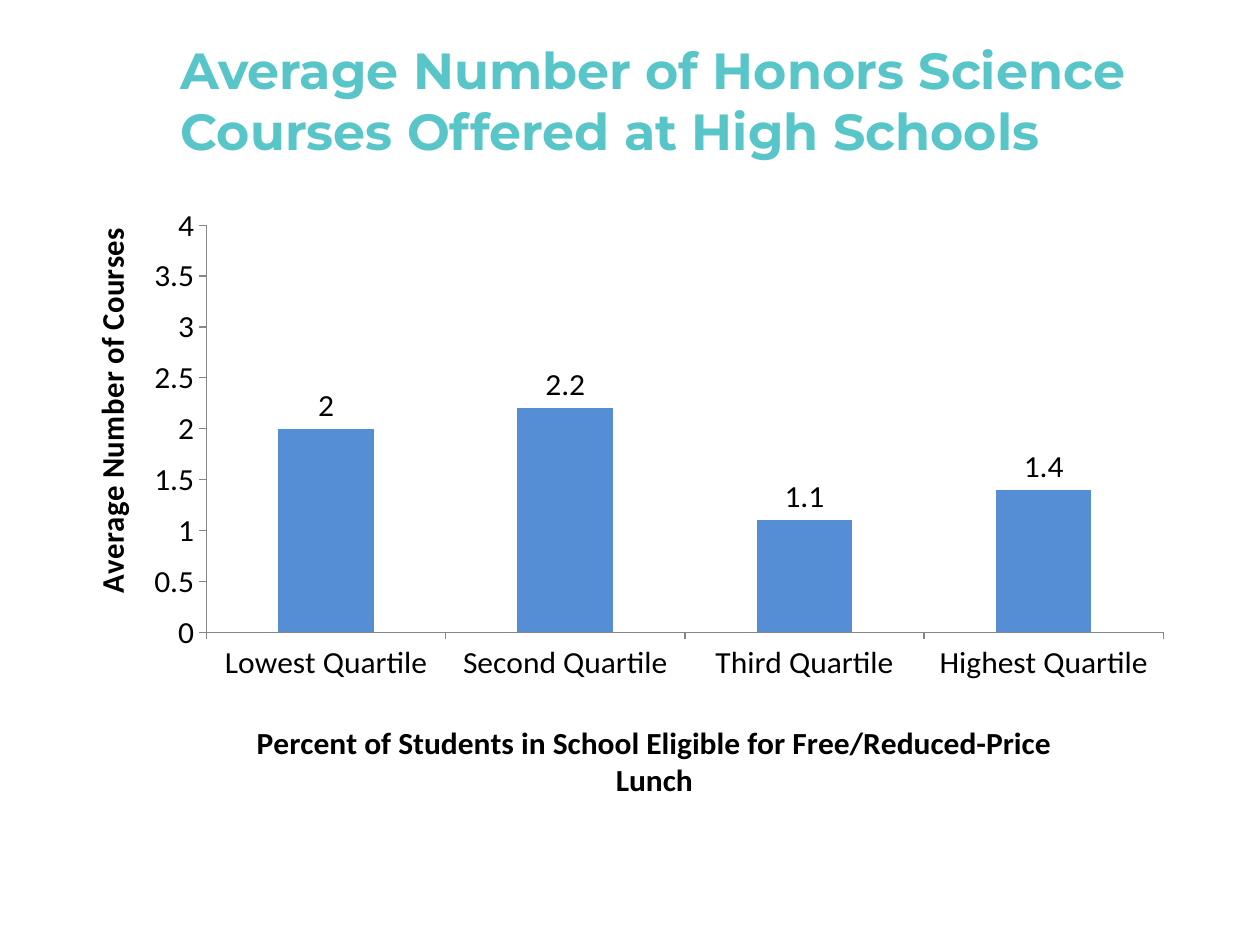
from dataclasses import dataclass

from lxml import etree
from pptx import Presentation
from pptx import util as u
from pptx.chart.data import CategoryChartData
from pptx.dml.color import RGBColor
from pptx.enum import chart as ch, text
from pptx.oxml.ns import qn


@dataclass(frozen=True)
class Theme:
    heading_font: str = "Montserrat"
    body_font: str = "Calibri"
    heading_size: int = 29
    body_size: int = 18
    heading: str = "58C5C9"
    ink: str = "000000"
    bar: str = "558ED5"
    axis: str = "868686"


def style_font(font, name, size, color, bold=False):
    font.name, font.size, font.bold = name, u.Pt(size), bold
    font.color.rgb = RGBColor.from_string(color)


def place(parent, index, inner=False, **fractions):
    """Give a chart part a manual layout, in fractions of the chart."""
    for old in parent.findall(qn("c:layout")):
        parent.remove(old)
    layout = etree.Element(qn("c:layout"))
    parent.insert(index, layout)
    manual = etree.SubElement(layout, qn("c:manualLayout"))
    settings = {"layoutTarget": "inner"} if inner else {}
    settings.update(xMode="edge", yMode="edge", **fractions)
    for tag, value in settings.items():
        etree.SubElement(manual, qn(f"c:{tag}")).set("val", str(value))


class SlideBuilder:
    def __init__(self, deck, theme):
        self.theme = theme
        self.slide = deck.slides.add_slide(deck.slide_layouts[5])

    def title(self, words, left, top, width, height):
        heading = self.slide.shapes.title
        heading.left, heading.top = u.Pt(left), u.Pt(top)
        heading.width, heading.height = u.Pt(width), u.Pt(height)
        frame = heading.text_frame
        frame.text = words
        frame.word_wrap = True
        frame.auto_size = text.MSO_AUTO_SIZE.NONE
        frame.vertical_anchor = text.MSO_ANCHOR.MIDDLE
        line = frame.paragraphs[0]
        line.alignment = text.PP_ALIGN.LEFT
        style_font(line.font, self.theme.heading_font, self.theme.heading_size,
                   self.theme.heading, bold=True)

    def axis(self, axis, words, x, y):
        axis.has_major_gridlines = False
        axis.major_tick_mark = ch.XL_TICK_MARK.OUTSIDE
        axis.minor_tick_mark = ch.XL_TICK_MARK.NONE
        axis.format.line.color.rgb = RGBColor.from_string(self.theme.axis)
        axis.format.line.width = u.Pt(0.75)
        caption = axis.axis_title
        caption.text_frame.text = words
        style_font(caption.text_frame.paragraphs[0].font, self.theme.body_font,
                   self.theme.body_size, self.theme.ink, bold=True)
        place(caption._element, 1, x=x, y=y)
        return caption

    def column_chart(self, categories, values, left, top, width, height):
        courses = CategoryChartData()
        courses.categories = categories
        courses.add_series("Series 1", values)
        chart = self.slide.shapes.add_chart(
            ch.XL_CHART_TYPE.COLUMN_CLUSTERED, u.Pt(left), u.Pt(top),
            u.Pt(width), u.Pt(height), courses).chart
        chart.has_legend = False
        chart.has_title = False
        style_font(chart.font, self.theme.body_font, self.theme.body_size,
                   self.theme.ink)

        # Bars and their values
        plot = chart.plots[0]
        plot.gap_width = 150
        plot.vary_by_categories = False
        fill = plot.series[0].format.fill
        fill.solid()
        fill.fore_color.rgb = RGBColor.from_string(self.theme.bar)
        plot.has_data_labels = True
        plot.data_labels.show_value = True
        plot.data_labels.position = ch.XL_LABEL_POSITION.OUTSIDE_END
        plot_area = chart._chartSpace.find(".//" + qn("c:plotArea"))
        place(plot_area, 0, inner=True, x=0.12, y=0.05, w=0.86, h=0.68)

        # Axes
        self.axis(chart.category_axis,
                  "Percent of Students in School Eligible for "
                  "Free/Reduced-Price Lunch", 0.16, 0.87)
        scale = chart.value_axis
        scale.minimum_scale, scale.maximum_scale = 0, 4
        scale.major_unit = 0.5
        caption = self.axis(scale, "Average Number of Courses", 0.01, 0.06)
        body = caption._element.find(".//" + qn("a:bodyPr"))
        body.set("rot", "-5400000")
        body.set("vert", "horz")


def main():
    deck = Presentation()
    deck.slide_width, deck.slide_height = u.Pt(720), u.Pt(540)
    builder = SlideBuilder(deck, Theme())
    builder.column_chart(
        ["Lowest Quartile", "Second Quartile", "Third Quartile",
         "Highest Quartile"],
        [2, 2.2, 1.1, 1.4], 41.75, 111.6, 635.75, 350.65)
    builder.title(
        "Average Number of Honors Science Courses Offered at High Schools",
        96, 12, 600, 90)
    deck.save("out.pptx")


if __name__ == "__main__":
    main()
